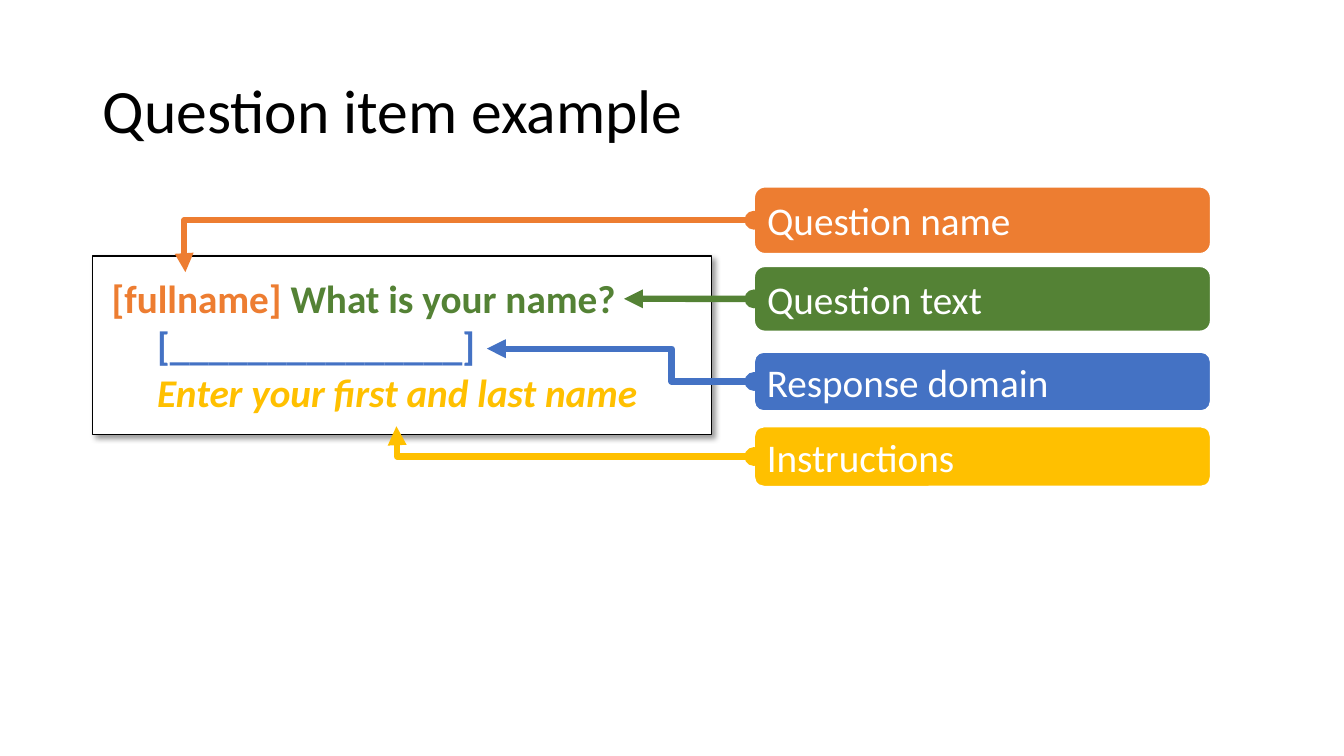
from lxml import etree
from pptx import Presentation
from pptx import util as u
from pptx.dml.color import RGBColor
from pptx.enum import shapes, text
from pptx.oxml import ns

WIDTH, HEIGHT = u.Inches(13.33), u.Inches(7.5)
FONT = "Calibri"
BLACK = RGBColor(0x00, 0x00, 0x00)
WHITE = RGBColor(0xFF, 0xFF, 0xFF)
ORANGE = RGBColor(0xED, 0x7D, 0x31)
GREEN = RGBColor(0x54, 0x82, 0x35)
BLUE = RGBColor(0x44, 0x72, 0xC4)
YELLOW = RGBColor(0xFF, 0xC0, 0x00)

LEFT_EDGE = 6.9
LABEL_LEFT, LABEL_WIDTH = 56.1, 34
SPACE = u.Inches(0.09)

# label, colour, top, height, arrow tip (x, y), elbow position; all in percent
PARTS = [
    ("Question name", ORANGE, 24.67, 8.93, (13.8, 36), 100.2),
    ("Question text", GREEN, 35.2, 8.67, (46.43, 39.53), None),
    ("Response domain", BLUE, 46.53, 7.87, (36.23, 46.13), 30.9),
    ("Instructions", YELLOW, 56.4, 8, (29.5, 56.4), 99.8),
]
# indent in spaces, then the coloured pieces of the line
QUESTION_LINES = [
    (1, [("[fullname] ", ORANGE, False), ("What is your name?", GREEN, False)]),
    (6, [("[_______________]", BLUE, False)]),
    (6, [("Enter your first and last name", YELLOW, True)]),
]


def across(percent):
    return round(WIDTH * percent / 100)


def down(percent):
    return round(HEIGHT * percent / 100)


def area(left, top, width, height):
    return across(left), down(top), across(width), down(height)


def style(run, size, color, bold=False, italic=False):
    font = run.font
    font.name, font.size, font.bold, font.italic = FONT, u.Pt(size), bold, italic
    font.color.rgb = color


def add_child(parent, tag, **attributes):
    child = etree.SubElement(parent, ns.qn(tag))
    for name, value in attributes.items():
        child.set(name, str(value))
    return child


def add_title(slide, wording):
    title = slide.shapes.add_textbox(*area(LEFT_EDGE, 5.33, 86.25, 19.33))
    frame = title.text_frame
    frame.word_wrap = True
    frame.vertical_anchor = text.MSO_ANCHOR.MIDDLE
    frame.text = wording
    frame.paragraphs[0].line_spacing = 0.9
    style(frame.paragraphs[0].runs[0], 44, BLACK)


def add_box(slide, kind, place, fill, outline, outline_width):
    box = slide.shapes.add_shape(kind, *place)
    box.shadow.inherit = False
    box.fill.solid()
    box.fill.fore_color.rgb = fill
    box.line.color.rgb = outline
    box.line.width = u.Pt(outline_width)
    box.text_frame.word_wrap = True
    box.text_frame.vertical_anchor = text.MSO_ANCHOR.MIDDLE
    return box


def add_label(slide, wording, color, top, height):
    label = add_box(slide, shapes.MSO_SHAPE.ROUNDED_RECTANGLE,
                    area(LABEL_LEFT, top, LABEL_WIDTH, height), color, WHITE, 1.5)
    label.text_frame.text = wording
    paragraph = label.text_frame.paragraphs[0]
    paragraph.alignment = text.PP_ALIGN.LEFT
    style(paragraph.runs[0], 28, WHITE)
    return label


def cast_shadow(box):
    effects = box._element.spPr.find(ns.qn("a:effectLst"))
    shadow = add_child(effects, "a:outerShdw", blurRad=u.Pt(4), dist=u.Pt(3),
                       dir=45 * 60000, algn="tl", rotWithShape=0)
    shade = add_child(shadow, "a:srgbClr", val=BLACK)
    add_child(shade, "a:alpha", val=40000)


def add_question(slide):
    question = add_box(slide, shapes.MSO_SHAPE.RECTANGLE,
                       area(LEFT_EDGE, 33.87, 46.05, 23.6), WHITE, BLACK, 1)
    cast_shadow(question)
    frame = question.text_frame
    for number, (spaces, pieces) in enumerate(QUESTION_LINES):
        line = frame.add_paragraph() if number else frame.paragraphs[0]
        line.alignment = text.PP_ALIGN.LEFT
        line._p.get_or_add_pPr().set("marL", str(spaces * SPACE))
        for wording, color, italic in pieces:
            run = line.add_run()
            run.text = wording
            style(run, 28, color, bold=True, italic=italic)


def add_arrow(slide, label, color, tip, elbow):
    """Run an arrow from the label's left side to the tip, bent if elbow is given."""
    kind = shapes.MSO_CONNECTOR.STRAIGHT if elbow is None else shapes.MSO_CONNECTOR.ELBOW
    arrow = slide.shapes.add_connector(kind, label.left, label.top + label.height // 2,
                                       across(tip[0]), down(tip[1]))
    arrow.line.color.rgb = color
    arrow.line.width = u.Pt(4.5)
    properties = arrow._element.spPr
    if elbow is None:
        arrow.begin_connect(label, 1)
    else:
        guides = properties.find(ns.qn("a:prstGeom")).get_or_add_avLst()
        add_child(guides, "a:gd", name="adj1", fmla=f"val {round(elbow * 1000)}")
    outline = arrow.line._get_or_add_ln()
    add_child(outline, "a:headEnd", type="oval")
    add_child(outline, "a:tailEnd", type="triangle")
    add_child(properties, "a:effectLst")


def main():
    deck = Presentation()
    deck.slide_width, deck.slide_height = WIDTH, HEIGHT
    slide = deck.slides.add_slide(deck.slide_layouts[6])
    add_title(slide, "Question item example")
    labels = [add_label(slide, *part[:4]) for part in PARTS]
    add_question(slide)
    for label, (_, color, _, _, tip, elbow) in zip(labels, PARTS):
        add_arrow(slide, label, color, tip, elbow)
    deck.save("out.pptx")


if __name__ == "__main__":
    main()
